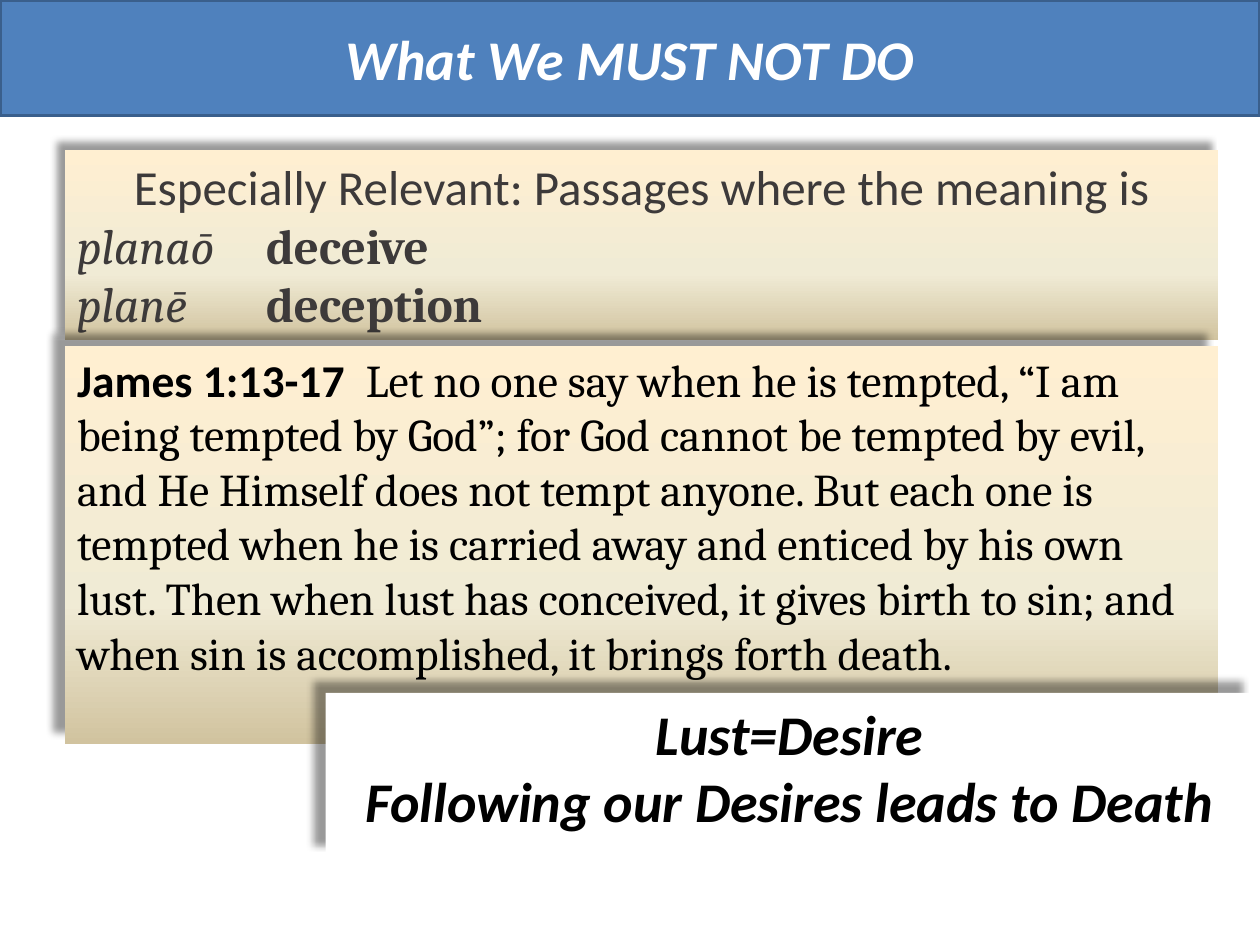
"""Build a slide on deception, temptation and desire with a banner and three text panels."""
from copy import deepcopy

from lxml import etree
from pptx import Presentation
from pptx.dml.color import RGBColor
from pptx.enum.shapes import MSO_SHAPE
from pptx.enum.text import MSO_ANCHOR, MSO_AUTO_SIZE, PP_ALIGN
from pptx.oxml.ns import qn
from pptx.util import Pt

RECTANGLE = MSO_SHAPE.RECTANGLE
TOP, MIDDLE = MSO_ANCHOR.TOP, MSO_ANCHOR.MIDDLE
FIXED, GROW = MSO_AUTO_SIZE.NONE, MSO_AUTO_SIZE.SHAPE_TO_FIT_TEXT
LEFT, CENTER = PP_ALIGN.LEFT, PP_ALIGN.CENTER

WHITE = RGBColor(0xFF, 0xFF, 0xFF)
BLACK = RGBColor(0x00, 0x00, 0x00)
CHARCOAL = RGBColor(0x3D, 0x3A, 0x3A)
BLUE = RGBColor(0x4F, 0x81, 0xBD)
DARK_BLUE = RGBColor(0x3A, 0x5F, 0x8C)
PARCHMENT = [
    (0, RGBColor(0xFF, 0xEF, 0xD1)),
    (0.65, RGBColor(0xF0, 0xEB, 0xD5)),
    (1, RGBColor(0xD1, 0xC3, 0x9F)),
]


def add_box(slide, place, paragraphs, size, color, anchor=TOP, auto_size=GROW):
    box = slide.shapes.add_shape(RECTANGLE, *(Pt(length) for length in place))
    box.shadow.inherit = False
    box.line.fill.background()
    frame = box.text_frame
    settings = {"word_wrap": True, "vertical_anchor": anchor, "auto_size": auto_size}
    for name, value in settings.items():
        setattr(frame, name, value)
    for index, (alignment, spans) in enumerate(paragraphs):
        para = frame.add_paragraph() if index else frame.paragraphs[0]
        para.alignment = alignment
        for text, style in spans:
            span = para.add_run()
            span.text = text
            span.font.color.rgb = color
            for name, value in {"size": Pt(size), **style}.items():
                setattr(span.font, name, value)
    return box


def add_shadow(box, distance):
    effects = box.element.spPr.find(qn("a:effectLst"))
    shadow = etree.SubElement(
        effects, qn("a:outerShdw"), blurRad=str(Pt(4)), dist=str(Pt(distance)),
        dir=str(225 * 60000), algn="tl", rotWithShape="0")
    tone = etree.SubElement(shadow, qn("a:srgbClr"), val=str(BLACK))
    etree.SubElement(tone, qn("a:alpha"), val="40000")


HEADING = {"name": "Calibri", "bold": True, "italic": True}
LABEL = {"name": "Calibri", "bold": True}
INTRO = {"name": "Calibri"}
GREEK = {"name": "Cambria", "italic": True}
MEANING = {"name": "Cambria", "bold": True}
VERSE = {"name": "Cambria"}

relevant_words = [
    (CENTER, [("Especially Relevant: Passages where the meaning is", INTRO)]),
    (LEFT, [("planaō \t", GREEK), ("deceive", MEANING)]),
    (LEFT, [("planē \t\t", GREEK), ("deception", MEANING)]),
]
passage = [(LEFT, [
    ("James 1:13-17  ", LABEL),
    ("Let no one say when he is tempted, “I am being tempted by God”; for God cannot be "
     "tempted by evil, and He Himself does not tempt anyone. But each one is tempted when "
     "he is carried away and enticed by his own lust. Then when lust has conceived, it "
     "gives birth to sin; and when sin is accomplished, it brings forth death.", VERSE),
])]
lesson = [(CENTER, [(text, HEADING)])
          for text in ("Lust=Desire", "Following our Desires leads to Death")]

deck = Presentation()
deck.slide_width, deck.slide_height = Pt(720), Pt(540)
slide = deck.slides.add_slide(deck.slide_layouts[6])

banner = add_box(slide, (0, 0, 720, 66), [(CENTER, [("What We MUST NOT DO", HEADING)])],
                 32, WHITE, MIDDLE, FIXED)
banner.fill.solid()
banner.fill.fore_color.rgb = BLUE
banner.line.color.rgb = DARK_BLUE
banner.line.width = Pt(2)

panels = [
    (85.7, 108.7, relevant_words, 28, CHARCOAL, 7),
    (197.5, 227.5, passage, 26, BLACK, 9),
]
for top, height, paragraphs, size, color, distance in panels:
    panel = add_box(slide, (37, top, 659, height), paragraphs, size, color)
    panel.fill.gradient()
    panel.fill.gradient_angle = 270
    stops = panel.element.spPr.find(qn("a:gradFill")).find(qn("a:gsLst"))
    stops.append(deepcopy(stops[0]))
    for stop, (position, tint) in zip(panel.fill.gradient_stops, PARCHMENT):
        stop.position = position
        stop.color.rgb = tint
    add_shadow(panel, distance)

callout = add_box(slide, (186, 396, 530.5, 93.5), lesson, 32, BLACK)
callout.fill.solid()
callout.fill.fore_color.rgb = WHITE
add_shadow(callout, 10)

deck.save("out.pptx")
